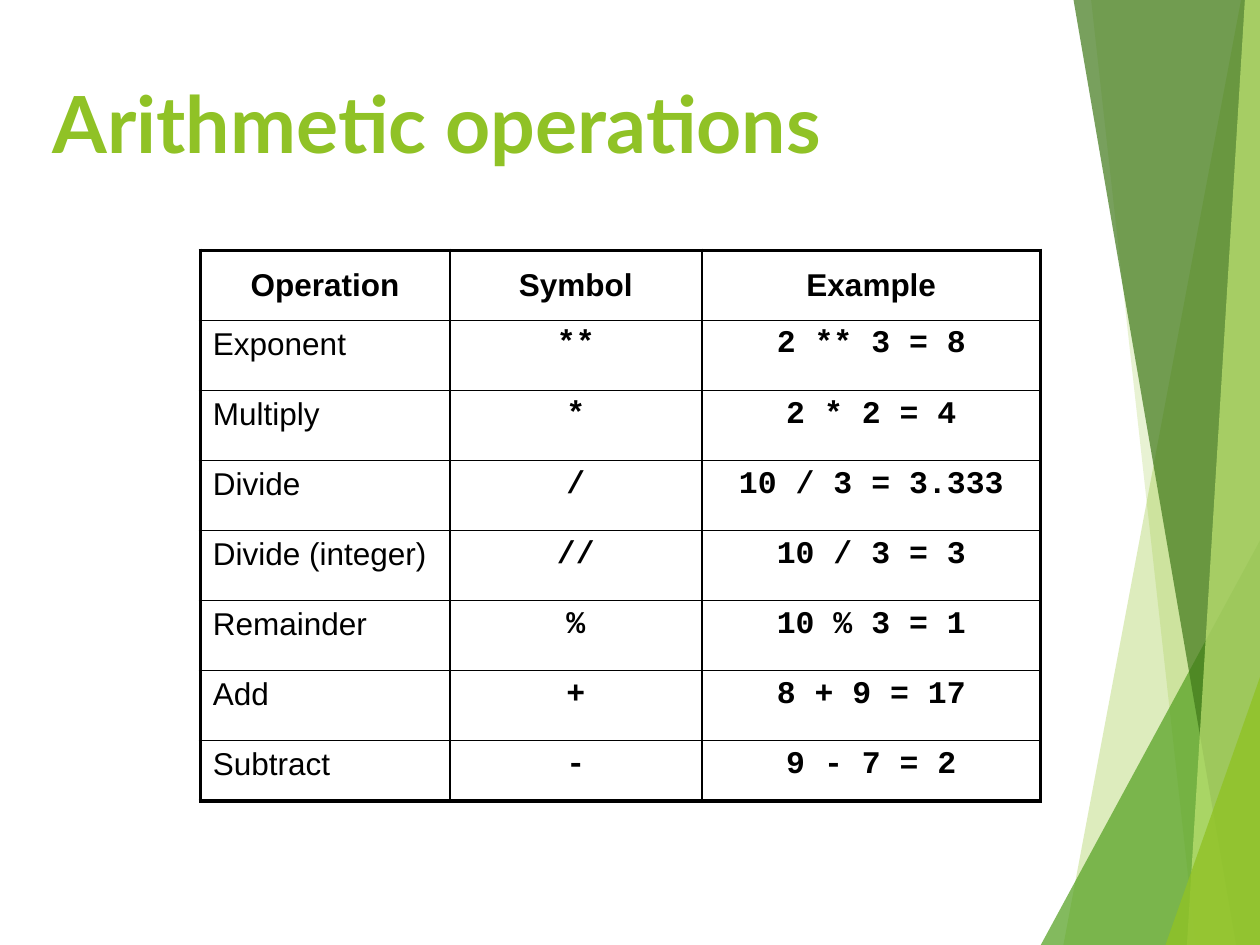
from lxml import etree
from pptx import Presentation
from pptx.dml.color import RGBColor
from pptx.enum.text import MSO_ANCHOR, PP_ALIGN
from pptx.oxml.ns import qn
from pptx.util import Inches, Pt

MIDDLE, TOP = MSO_ANCHOR.MIDDLE, MSO_ANCHOR.TOP
LEFT, CENTER = PP_ALIGN.LEFT, PP_ALIGN.CENTER
LIME = RGBColor(0x90, 0xC2, 0x26)
GREEN = RGBColor(0x54, 0xA0, 0x21)
DARK_GREEN = RGBColor(0x3F, 0x78, 0x19)
PALE_LIME = RGBColor(0xC0, 0xE4, 0x74)
BLACK = RGBColor(0, 0, 0)
THIN, THICK = Pt(1), Pt(2.25)


def set_border(cell, side, width):
    line = etree.SubElement(cell._tc.get_or_add_tcPr(), qn(f"a:{side}"), w=str(width))
    fill = etree.SubElement(line, qn("a:solidFill"))
    etree.SubElement(fill, qn("a:srgbClr"), val=str(BLACK))


def style_paragraph(paragraph, text, name, size, color, bold, alignment):
    paragraph.text = text
    paragraph.alignment = alignment
    font = paragraph.font
    font.name, font.size, font.bold = name, Pt(size), bold
    font.color.rgb = color


presentation = Presentation()
presentation.slide_width = width = Inches(10)
presentation.slide_height = height = Inches(7.5)
slide = presentation.slides.add_slide(presentation.slide_layouts[6])

# Points are thousandths of the slide's width and height.
shards = [
    (LIME, 30, [(985, 0), (844, 1000), (1001, 1000), (1001, 0)]),
    (LIME, 20, [(866, 0), (949, 1000), (1001, 1000), (1001, 0)]),
    (GREEN, 72, [(826, 1000), (1000, 572), (1001, 1000)]),
    (DARK_GREEN, 70, [(852, 0), (981, 1000), (1001, 1000), (1001, 0)]),
    (PALE_LIME, 70, [(988, 0), (942, 1000), (1001, 1000), (1001, 0)]),
    (LIME, 80, [(925, 1000), (1001, 713), (1001, 1000)]),
]
for color, opacity, points in shards:
    builder = slide.shapes.build_freeform(*points[0], scale=(width / 1000, height / 1000))
    builder.add_line_segments(points[1:], close=True)
    shard = builder.convert_to_shape()
    shard.shadow.inherit = False
    shard.line.fill.background()
    shard.fill.solid()
    shard.fill.fore_color.rgb = color
    color_element = shard._element.spPr.find(f".//{qn('a:srgbClr')}")
    etree.SubElement(color_element, qn("a:alpha"), val=str(opacity * 1000))

title = slide.shapes.add_textbox(
    int(width * 0.032), int(height * 0.05), int(width * 0.794), int(height * 0.158)
)
title.text_frame.word_wrap = True
title.text_frame.vertical_anchor = MIDDLE
style_paragraph(
    title.text_frame.paragraphs[0], "Arithmetic operations", "Lato", 45, LIME, True, LEFT
)

rows = [
    ("Operation", "Symbol", "Example"),
    ("Exponent", "**", "2 ** 3 = 8"),
    ("Multiply", "*", "2 * 2 = 4"),
    ("Divide", "/", "10 / 3 = 3.333"),
    ("Divide (integer)", "//", "10 / 3 = 3"),
    ("Remainder", "%", "10 % 3 = 1"),
    ("Add", "+", "8 + 9 = 17"),
    ("Subtract", "-", "9 - 7 = 2"),
]
column_widths = [Inches(1.98), Inches(2), Inches(2.69)]
row_heights = [Inches(0.556)] * 7 + [Inches(0.48)]
last_row, last_column = len(rows) - 1, len(column_widths) - 1
table = slide.shapes.add_table(
    len(rows), len(column_widths), int(width * 0.159), int(height * 0.265),
    sum(column_widths), sum(row_heights),
).table
table.first_row = table.horz_banding = False
for column, column_width in zip(table.columns, column_widths):
    column.width = column_width
for row, row_height in zip(table.rows, row_heights):
    row.height = row_height

for row_index, row in enumerate(rows):
    for column_index, text in enumerate(row):
        cell = table.cell(row_index, column_index)
        header, label = row_index == 0, column_index == 0
        cell.vertical_anchor = MIDDLE if header else TOP
        style_paragraph(
            cell.text_frame.paragraphs[0], text,
            "Arial" if header or label else "Courier New", 18, BLACK,
            header or not label, CENTER if header or not label else LEFT,
        )
        outer_sides = {
            "lnL": label,
            "lnR": column_index == last_column,
            "lnT": header,
            "lnB": row_index == last_row,
        }
        for side, outer in outer_sides.items():
            set_border(cell, side, THICK if outer else THIN)
        cell.fill.background()

presentation.save("out.pptx")
